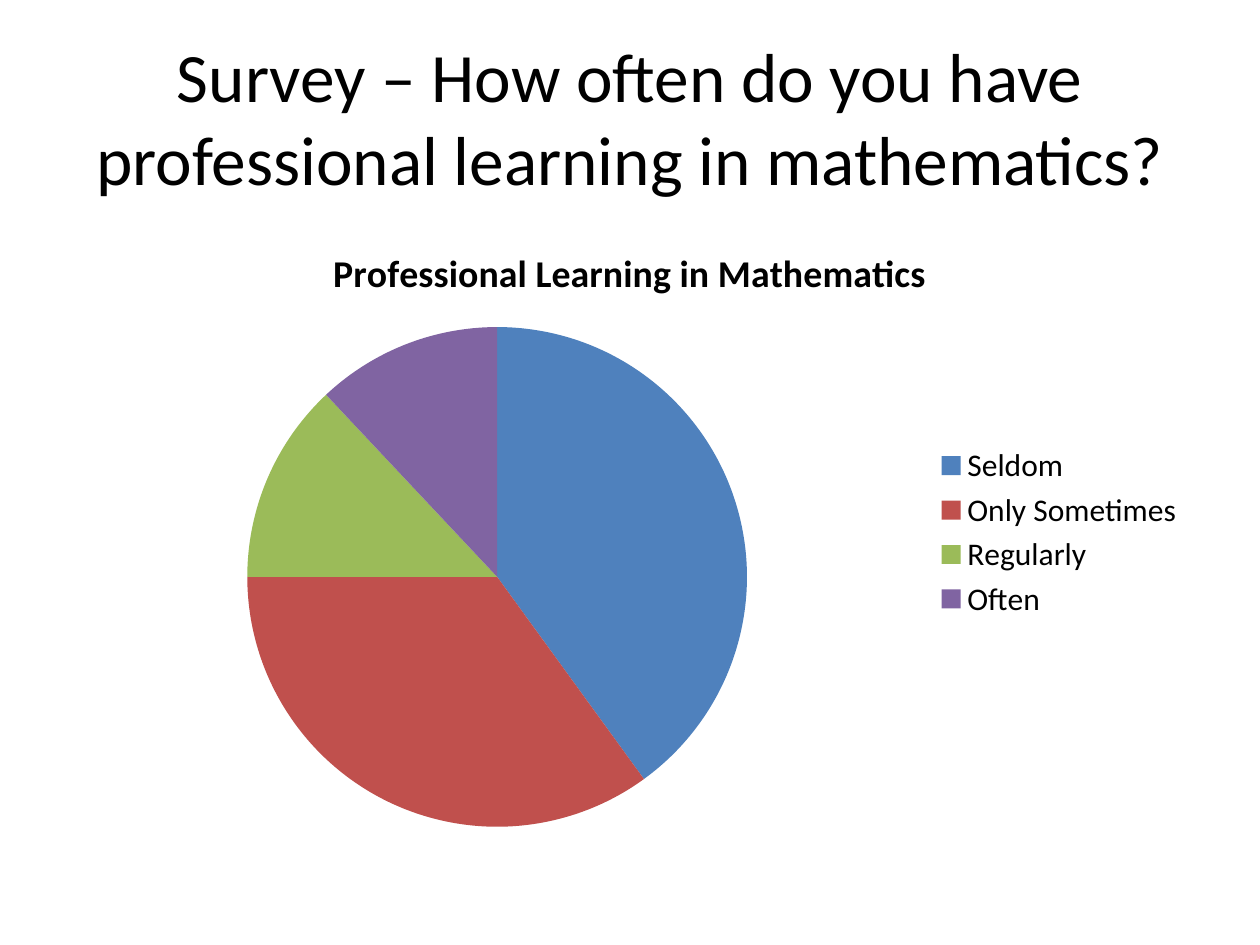
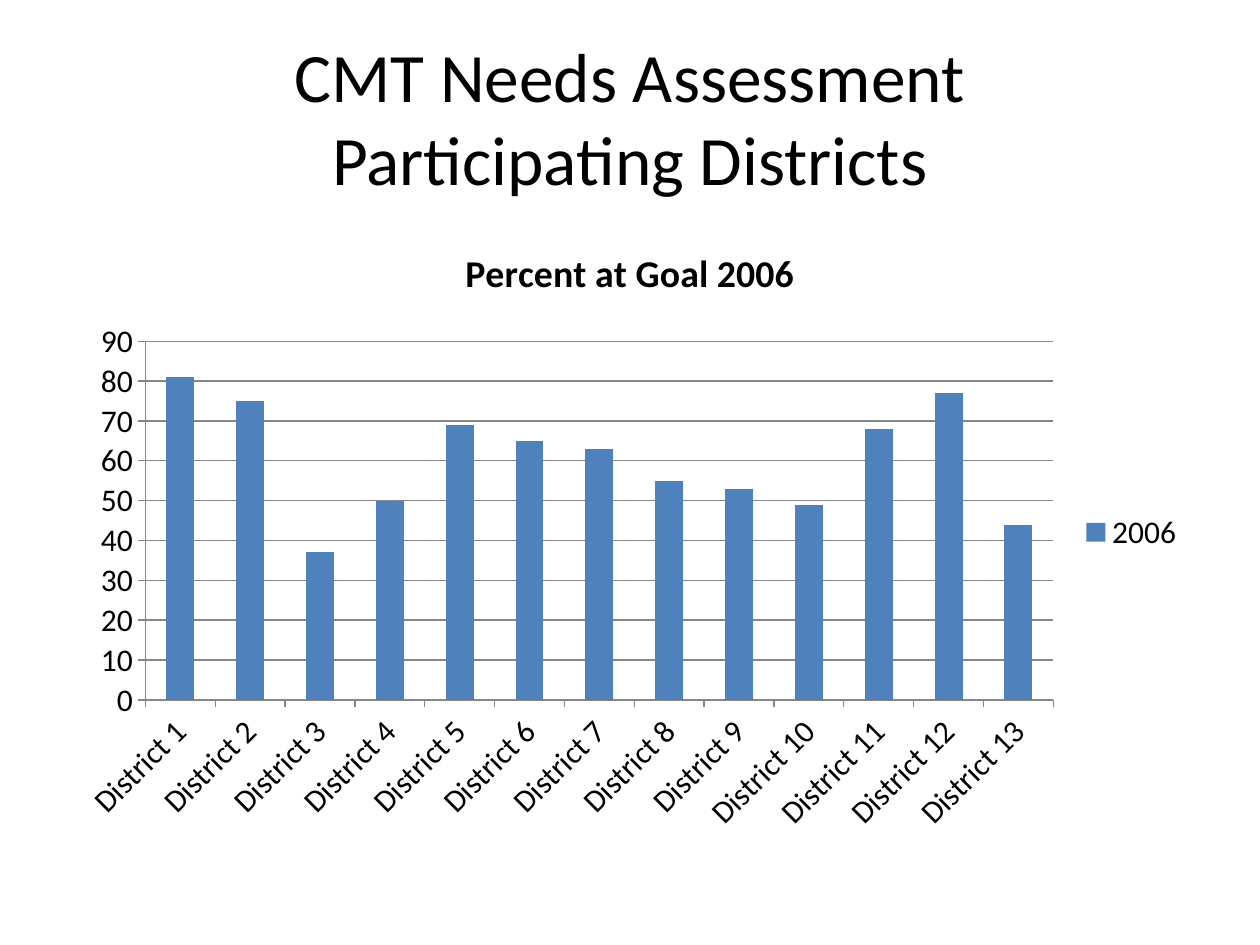
"""Build two survey slides, each a title above one chart."""
from pptx import Presentation
from pptx.chart.data import CategoryChartData
from pptx.dml.color import RGBColor
from pptx.enum.chart import XL_CHART_TYPE, XL_LEGEND_POSITION, XL_TICK_MARK
from pptx.enum.text import MSO_ANCHOR, PP_ALIGN
from pptx.util import Inches, Pt

FONT = "Calibri"
HUES = {"text": "000000", "back": "FFFFFF", "grid": "868686",
        "blue": "4F81BD", "red": "C0504D", "green": "9BBB59", "plum": "8064A2"}
SLICES = ("blue", "red", "green", "plum")
SCORES = (81, 75, 37, 50, 69, 65, 63, 55, 53, 49, 68, 77, 44)
SLIDES = [
    {"title": "Survey – How often do you have professional learning in mathematics?",
     "head": "Professional Learning in Mathematics",
     "name": "Professional Learning in Mathematics",
     "kind": XL_CHART_TYPE.PIE,
     "data": {"Seldom": 40, "Only Sometimes": 35, "Regularly": 13, "Often": 12}},
    {"title": "CMT Needs Assessment\vParticipating Districts",
     "head": "Percent at Goal 2006",
     "name": "2006",
     "kind": XL_CHART_TYPE.COLUMN_CLUSTERED,
     "data": {f"District {n}": score for n, score in enumerate(SCORES, 1)}},
]
TITLE_BOX = [Inches(n) for n in (0.5, 0.3, 9, 1.25)]
CHART_BOX = [Inches(n) for n in (0.5, 1.75, 9, 4.95)]


def color(key):
    return RGBColor.from_string(HUES[key])


def style(font, size, bold=False):
    font.name, font.size, font.bold = FONT, Pt(size), bold
    font.color.rgb = color("text")


def write(frame, text, size=18, bold=False):
    frame.text = text
    for para in frame.paragraphs:
        para.alignment = PP_ALIGN.CENTER
        style(para.font, size, bold)
        for run in para.runs:
            style(run.font, size, bold)


def paint(fill, key):
    fill.solid()
    fill.fore_color.rgb = color(key)


def rule(line):
    line.color.rgb = color("grid")
    line.width = Pt(0.75)


def add_title(slide, text):
    title = slide.shapes.title
    title.left, title.top, title.width, title.height = TITLE_BOX
    write(title.text_frame, text, size=39.6)
    title.text_frame.word_wrap = True
    title.text_frame.vertical_anchor = MSO_ANCHOR.MIDDLE


def add_graph(slide, item):
    data = CategoryChartData()
    data.categories = list(item["data"])
    data.add_series(item["name"], list(item["data"].values()))
    chart = slide.shapes.add_chart(item["kind"], *CHART_BOX, data).chart
    style(chart.font, 18)
    chart.has_title = True
    write(chart.chart_title.text_frame, item["head"], size=21.6, bold=True)
    chart.chart_title.include_in_layout = False
    chart.has_legend = True
    chart.legend.position = XL_LEGEND_POSITION.RIGHT
    chart.legend.include_in_layout = False
    return chart


def dress_pie(chart):
    plot = chart.plots[0]
    plot.vary_by_categories = True
    for n, key in enumerate(SLICES):
        paint(plot.series[0].points[n].format.fill, key)


def dress_bars(chart):
    plot = chart.plots[0]
    plot.vary_by_categories = False
    plot.gap_width = 150
    paint(plot.series[0].format.fill, "blue")
    for axis in (chart.category_axis, chart.value_axis):
        axis.major_tick_mark = XL_TICK_MARK.OUTSIDE
        axis.minor_tick_mark = XL_TICK_MARK.NONE
        rule(axis.format.line)
    chart.value_axis.has_major_gridlines = True
    rule(chart.value_axis.major_gridlines.format.line)


def main():
    deck = Presentation()
    deck.slide_width, deck.slide_height = Inches(10), Inches(7.5)
    for item in SLIDES:
        slide = deck.slides.add_slide(deck.slide_layouts[5])
        paint(slide.background.fill, "back")
        add_title(slide, item["title"])
        chart = add_graph(slide, item)
        dress = dress_pie if item["kind"] == XL_CHART_TYPE.PIE else dress_bars
        dress(chart)
    deck.save("out.pptx")


if __name__ == "__main__":
    main()
